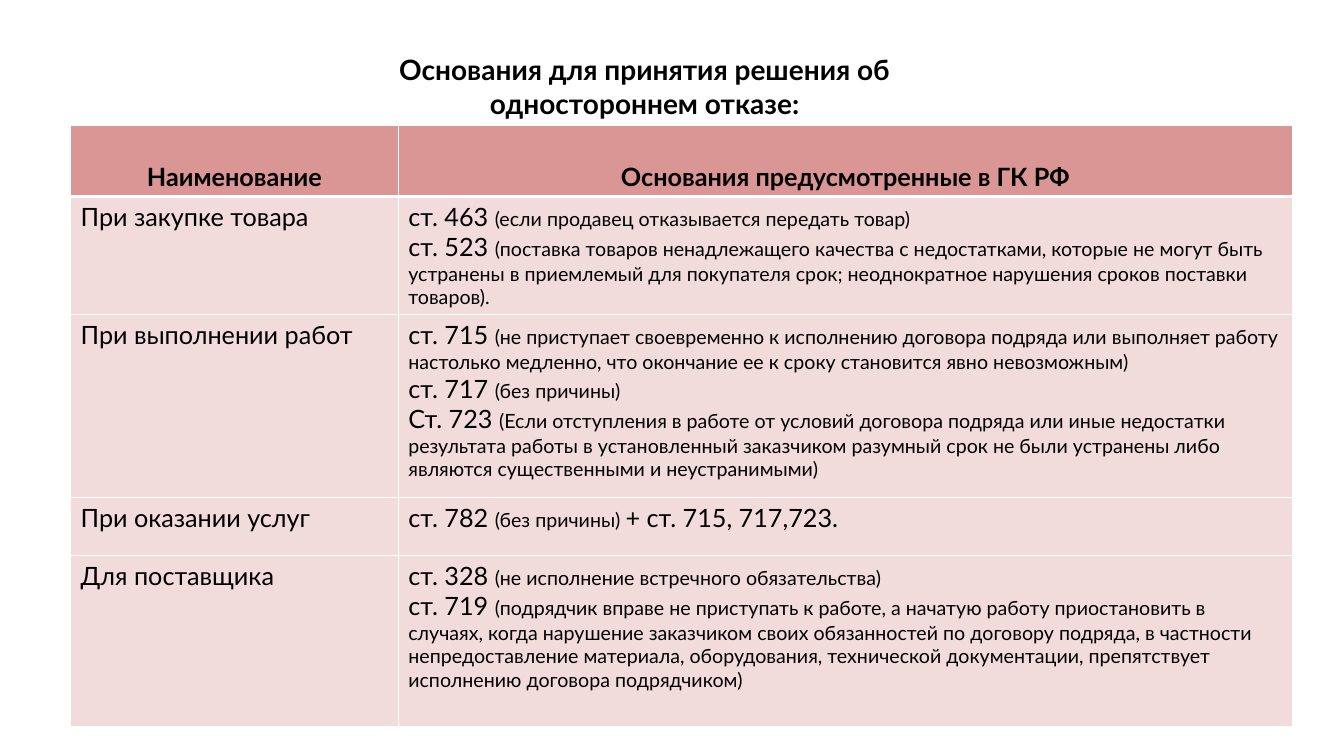
from lxml import etree
from pptx import Presentation
from pptx.dml.color import RGBColor
from pptx.enum.text import MSO_ANCHOR, MSO_AUTO_SIZE, PP_ALIGN
from pptx.oxml.ns import qn
from pptx.util import Emu, Pt

PX = 9144  # 100 px to the inch
FONT = "Lato"
BLACK, WHITE, ROSE, PALE_ROSE = "000000", "FFFFFF", "D99694", "F2DCDB"
ARTICLE, NOTE = 18, 14

TITLE = ["Основания для принятия решения об", "одностороннем отказе:"]
HEADER = ["Наименование", "Основания предусмотренные в ГК РФ"]
# Each row: name, then paragraphs whose parts alternate article and note
GROUNDS = [
    ("При закупке товара", [
        ["ст. 463 ", "(если продавец отказывается передать товар)"],
        ["ст. 523 ", "(поставка товаров ненадлежащего качества с недостатками, "
         "которые не могут быть устранены в приемлемый для покупателя срок; "
         "неоднократное нарушения сроков поставки товаров)."],
    ]),
    ("При выполнении работ", [
        ["ст. 715 ", "(не приступает своевременно к исполнению договора подряда "
         "или выполняет работу настолько медленно, что окончание ее к сроку "
         "становится явно невозможным)"],
        ["ст. 717 ", "(без причины)"],
        ["Ст. 723 ", "(Если отступления в работе от условий договора подряда или "
         "иные недостатки результата работы в установленный заказчиком разумный "
         "срок не были устранены либо являются существенными и неустранимыми)"],
    ]),
    ("При оказании услуг", [
        ["ст. 782 ", "(без причины) ", "+ ст. 715, 717,723."],
    ]),
    ("Для поставщика", [
        ["ст. 328 ", "(не исполнение встречного обязательства)"],
        ["ст. 719 ", "(подрядчик вправе не приступать к работе, а начатую работу "
         "приостановить в случаях, когда нарушение заказчиком своих обязанностей "
         "по договору подряда, в частности непредоставление материала, "
         "оборудования, технической документации, препятствует исполнению "
         "договора подрядчиком)"],
    ]),
]
COLUMNS = [325, 887]
ROWS = [71, 117, 182, 57, 170]


def px(n):
    return Emu(n * PX)


def color(value):
    return RGBColor.from_string(value)


def set_font(font, size, bold=False):
    font.name, font.size, font.bold = FONT, Pt(size), bold
    font.color.rgb = color(BLACK)


def add_title(s, left, top, width, height):
    sp = s.shapes.title
    sp.left, sp.top, sp.width, sp.height = map(px, (left, top, width, height))
    tf = sp.text_frame
    tf.auto_size = MSO_AUTO_SIZE.NONE
    tf.word_wrap = True
    tf.vertical_anchor = MSO_ANCHOR.TOP
    tf.margin_left = tf.margin_right = tf.margin_bottom = 0
    tf.margin_top = px(34)
    tf.text = "\n".join(TITLE)
    for p in tf.paragraphs:
        p.alignment = PP_ALIGN.CENTER
        set_font(p.font, 20, True)


def set_borders(cell, bottom):
    """Draw white cell borders; only the bottom width (pt) varies."""
    tcPr = cell._tc.get_or_add_tcPr()
    widths = {"a:lnL": 1, "a:lnR": 1, "a:lnT": 1, "a:lnB": bottom}
    for i, (tag, width) in enumerate(widths.items()):
        ln = etree.Element(qn(tag), w=str(Pt(width)))
        fill = etree.SubElement(ln, qn("a:solidFill"))
        etree.SubElement(fill, qn("a:srgbClr"), val=WHITE)
        tcPr.insert(i, ln)


def fill_cell(cell, paragraphs, header=False):
    cell.fill.solid()
    cell.fill.fore_color.rgb = color(ROSE if header else PALE_ROSE)
    set_borders(cell, 3 if header else 1)
    cell.vertical_anchor = MSO_ANCHOR.BOTTOM if header else MSO_ANCHOR.TOP
    tf = cell.text_frame
    for i, parts in enumerate(paragraphs):
        p = tf.add_paragraph() if i else tf.paragraphs[0]
        p.alignment = PP_ALIGN.CENTER if header else PP_ALIGN.LEFT
        for j, text in enumerate(parts):
            r = p.add_run()
            r.text = text
            set_font(r.font, NOTE if j % 2 else ARTICLE, header)


def add_grounds_table(s, left, top):
    table = s.shapes.add_table(len(ROWS), len(COLUMNS), px(left), px(top),
                               px(sum(COLUMNS)), px(sum(ROWS))).table
    for column, width in zip(table.columns, COLUMNS):
        column.width = px(width)
    for row, height in zip(table.rows, ROWS):
        row.height = px(height)
    for i, text in enumerate(HEADER):
        fill_cell(table.cell(0, i), [[text]], header=True)
    for i, (name, grounds) in enumerate(GROUNDS, 1):
        fill_cell(table.cell(i, 0), [[name]])
        fill_cell(table.cell(i, 1), grounds)


def main():
    prs = Presentation()
    prs.slide_width, prs.slide_height = px(1333), px(750)
    s = prs.slides.add_slide(prs.slide_layouts[5])
    add_title(s, 88, 18, 1103, 145)
    add_grounds_table(s, 70, 124)
    prs.save("out.pptx")


if __name__ == "__main__":
    main()
